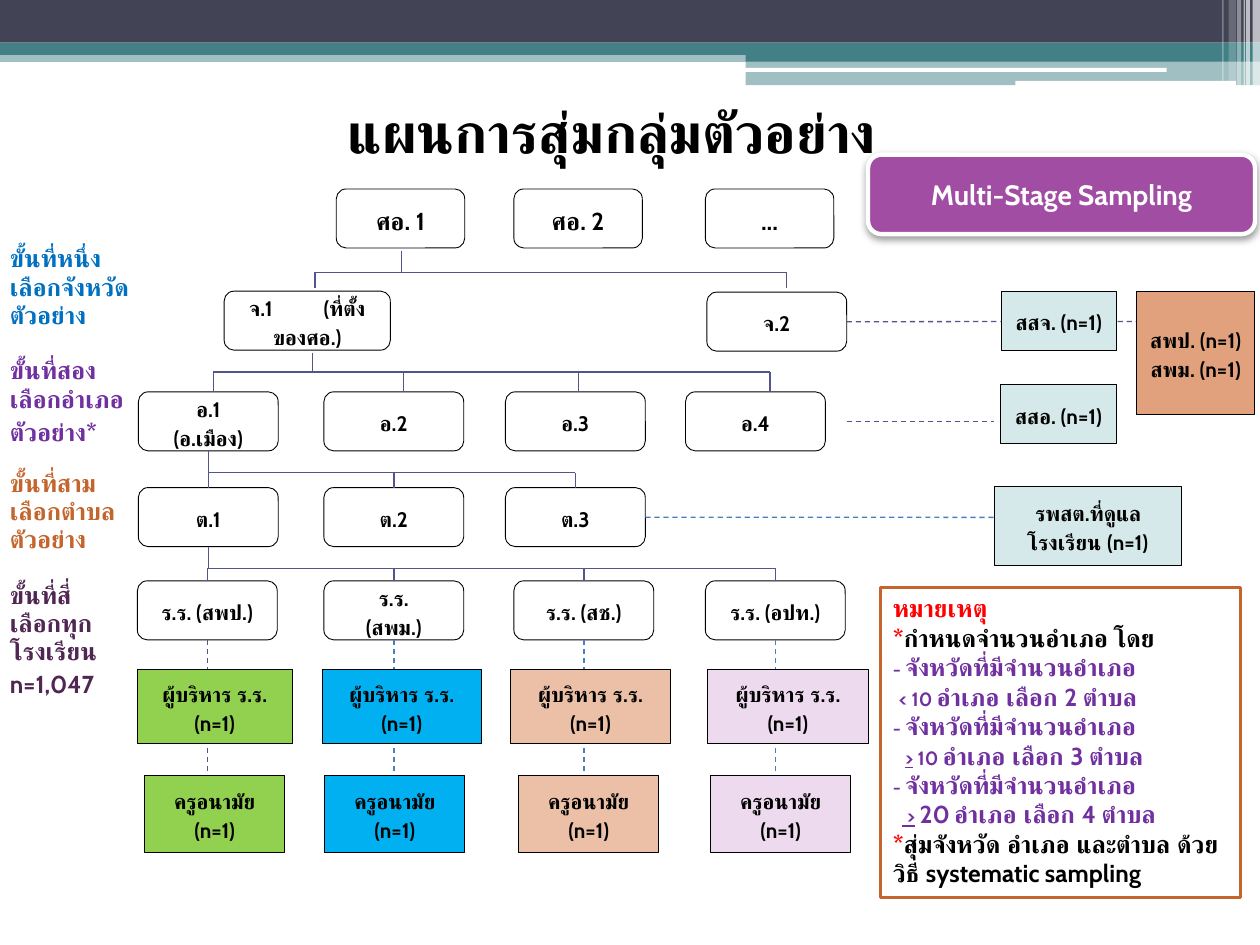
from lxml import etree
from pptx import Presentation
from pptx.dml.color import RGBColor
from pptx.enum.dml import MSO_LINE_DASH_STYLE as Dash
from pptx.enum.shapes import MSO_CONNECTOR, MSO_SHAPE
from pptx.enum.text import MSO_ANCHOR as Anchor, PP_ALIGN as Align
from pptx.oxml.ns import qn
from pptx.util import Cm, Pt

FONT = "Cabin"
INDIGO, BLUE, TEAL, PURPLE, RUST = "53548A", "4B7EBC", "438086", "7030A0", "C4652D"
BLACK, WHITE, RED, MINT = "000000", "FFFFFF", "FF0000", "D6E9EA"
BOTTOM, RIGHT, TOP = 2, 3, 0
BOX_W, BOX_H = 2.82, 1.19


def color(value):
    return RGBColor.from_string(value)


def child(parent, tag, **attributes):
    return etree.SubElement(parent, qn(tag), attributes)


def style_font(font, size, fill=BLACK):
    font.name, font.size, font.bold = FONT, Pt(size), True
    font.color.rgb = color(fill)


def add_box(page, left, top, width, height, fill=None, line=None, weight=0.5,
            rounded=False, alpha=None):
    kind = MSO_SHAPE.ROUNDED_RECTANGLE if rounded else MSO_SHAPE.RECTANGLE
    box = page.shapes.add_shape(kind, Cm(left), Cm(top), Cm(width), Cm(height))
    box.shadow.inherit = False
    if fill:
        box.fill.solid()
        box.fill.fore_color.rgb = color(fill)
        if alpha:
            solid = box.fill._xPr.find(qn("a:solidFill"))
            child(solid[0], "a:alpha", val=str(alpha * 1000))
    else:
        box.fill.background()
    if line:
        box.line.color.rgb = color(line)
        box.line.width = Pt(weight)
    else:
        box.line.fill.background()
    return box


def write(frame, lines, size, fill=BLACK, align=Align.CENTER, spacing=1.15, after=0):
    frame.word_wrap = True
    for index, line in enumerate(lines):
        para = frame.paragraphs[0] if index == 0 else frame.add_paragraph()
        para.text = line
        para.alignment, para.line_spacing, para.space_after = align, spacing, Pt(after)
        style_font(para.font, size, fill)


def add_label(page, lines, left, top, width=BOX_W, height=BOX_H, fill=None,
              size=12, rounded=False):
    box = add_box(page, left, top, width, height, fill, BLACK, rounded=rounded)
    box.text_frame.vertical_anchor = Anchor.MIDDLE
    write(box.text_frame, lines, size, after=10 if len(lines) == 1 else 0)
    return box


def add_row(page, labels, lefts, top, width=BOX_W, fill=None, size=12):
    return [add_label(page, [label], left, top, width, fill=fill, size=size, rounded=True)
            for label, left in zip(labels, lefts)]


def add_line(page, x1, y1, x2, y2, stroke=INDIGO, dashed=False):
    line = page.shapes.add_connector(MSO_CONNECTOR.STRAIGHT, Cm(x1), Cm(y1), Cm(x2), Cm(y2))
    line.line.color.rgb = color(stroke)
    line.line.width = Pt(0.75)
    if dashed:
        line.line.dash_style = Dash.DASH
    child(line._element.spPr, "a:effectLst")
    return line


def add_branch(page, trunk, top, bar, drops, bottom):
    """Trunk down to a bar, and one drop from the bar to each child."""
    stem = add_line(page, trunk, top, trunk, bar)
    add_line(page, drops[0], bar, drops[-1], bar)
    return stem, [add_line(page, x, bar, x, bottom) for x in drops]


def add_joined_branch(page, parent, children, bar):
    middles = [(box.left + box.width / 2) / Cm(1) for box in children]
    trunk = (parent.left + parent.width / 2) / Cm(1)
    stem, drops = add_branch(page, trunk, (parent.top + parent.height) / Cm(1), bar,
                             middles, children[0].top / Cm(1))
    stem.begin_connect(parent, BOTTOM)
    for drop, box in zip(drops, children):
        drop.end_connect(box, TOP)


def add_banner(page):
    for left, top, width, height, fill, alpha in [
            (0, 1.02, 25.4, 0.55 - 0.32, TEAL, 50), (0, 0, 25.4, 0.86, "424456", None),
            (0, 0.86, 25.4, 0.25, TEAL, None), (15.03, 0.99, 10.37, 0.25, TEAL, None),
            (15.03, 1.22, 10.37, 0.5, TEAL, 50)]:
        add_box(page, left, top, width, height, fill, alpha=alpha)
    for left, top, width, height in [(15.01, 1.37, 8.51, 0.08), (20.47, 1.63, 4.45, 0.1)]:
        add_box(page, left, top, width, height, WHITE, rounded=True)
    for left, width, height, alpha in [
            (25.25, 0.15, 1.73, 65), (25.12, 0.08, 1.73, 65), (25.07, 0.03, 1.73, 60),
            (24.94, 0.08, 1.73, 40), (24.77, 0.15, 1.63, 20), (24.64, 0.03, 1.63, 30)]:
        add_box(page, left, 0, width, height, WHITE, alpha=alpha)


def add_steps(page):
    steps = [
        (1.4, BLACK, []),
        (2.26, "0070C0", ["ขั้นที่หนึ่ง", "เลือกจังหวัดตัวอย่าง"]),
        (2.26, PURPLE, ["ขั้นที่สอง", "เลือกอำเภอตัวอย่าง*"]),
        (2.26, RUST, ["ขั้นที่สาม", "เลือกตำบลตัวอย่าง"]),
        (2.97, "502652", ["ขั้นที่สี่", "เลือกทุกโรงเรียน", "n=1,047"]),
    ]
    table = page.shapes.add_table(len(steps), 1, Cm(0.15), Cm(3.53), Cm(2.84), Cm(11.15)).table
    table.first_row = table.horz_banding = False
    for index, (height, fill, lines) in enumerate(steps):
        table.rows[index].height = Cm(height)
        cell = table.cell(index, 0)
        cell.fill.background()
        cell.margin_left = cell.margin_right = Cm(0.05)
        cell.margin_top = cell.margin_bottom = 0
        write(cell.text_frame, lines, 14, fill, Align.LEFT)
        borders = cell._tc.get_or_add_tcPr()
        for position, side in enumerate(("a:lnL", "a:lnR", "a:lnT", "a:lnB")):
            edge = etree.Element(qn(side), w="0")
            child(edge, "a:noFill")
            borders.insert(position, edge)


def add_heading(page):
    title = page.shapes.add_textbox(Cm(0.15), Cm(1.63), Cm(24.36), Cm(1.68))
    write(title.text_frame, ["แผนการสุ่มกลุ่มตัวอย่าง"], 32)
    badge = add_box(page, 17.5, 3.12, 7.8, 1.6, "A04DA3", WHITE, 2.5, rounded=True)
    badge.text_frame.vertical_anchor = Anchor.MIDDLE
    write(badge.text_frame, ["Multi-Stage Sampling"], 16, WHITE, spacing=1)
    shadow = child(badge._element.spPr.find(qn("a:effectLst")), "a:outerShdw",
                   blurRad=str(Pt(4.1)), dist=str(Pt(2)), dir="5400000", rotWithShape="0")
    child(child(shadow, "a:srgbClr", val=BLACK), "a:alpha", val="40000")


def add_notes(page):
    big, small = 14, 11
    district = [("- ", small, PURPLE, False), ("จังหวัดที่มีจำนวนอำเภอ", big, PURPLE, False)]
    notes = [
        (0, [("หมายเหตุ", big, RED, False)]),
        (0, [("*", big, RED, False), ("กำหนดจำนวนอำเภอ", big, BLACK, False),
             (" ", small, BLACK, False), ("โดย", big, BLACK, False)]),
        (0, district),
        (0.12, [("< 10 ", small, PURPLE, False), ("อำเภอ เลือก 2 ตำบล", big, PURPLE, False)]),
        (0, district),
        (0.24, [(">", small, PURPLE, True), (" 10 ", small, PURPLE, False),
                ("อำเภอ เลือก 3 ตำบล", big, PURPLE, False)]),
        (0, district),
        (0.19, [(" >", small, PURPLE, True), (" ", small, PURPLE, False),
                ("20", big, PURPLE, False), (" ", small, PURPLE, False),
                ("อำเภอ เลือก 4 ตำบล", big, PURPLE, False)]),
        (0, [("*", big, RED, False),
             ("สุ่มจังหวัด อำเภอ และตำบล ด้วยวิธี systematic sampling", big, BLACK, False)]),
    ]
    frame = add_box(page, 17.75, 11.84, 7.26, 6.25, WHITE, RUST, 1.5).text_frame
    frame.word_wrap, frame.vertical_anchor = True, Anchor.TOP
    for index, (indent, spans) in enumerate(notes):
        para = frame.paragraphs[0] if index == 0 else frame.add_paragraph()
        para.alignment = Align.LEFT
        para._p.get_or_add_pPr().set("marL", str(Cm(indent)))
        for text, size, fill, underlined in spans:
            span = para.add_run()
            span.text = text
            style_font(span.font, size, fill)
            span.font.underline = underlined


def main():
    deck = Presentation()
    deck.slide_width, deck.slide_height = Cm(25.4), Cm(19.05)
    page = deck.slides.add_slide(deck.slide_layouts[6])
    add_banner(page)
    add_steps(page)
    add_heading(page)

    # Sampling levels: centres, provinces, districts, subdistricts, schools
    add_row(page, ["ศอ. 1", "ศอ. 2", "..."], [6.78, 10.36, 14.22], 3.81, 2.59, size=14)
    home = add_label(page, ["จ.1\t(ที่ตั้ง\vของศอ.)"], 4.52, 5.87, 3.35, rounded=True)
    tabs = child(home.text_frame.paragraphs[0]._p.get_or_add_pPr(), "a:tabLst")
    child(tabs, "a:tab", pos=str(Cm(1.5)), algn="l")
    province = add_label(page, ["จ.2"], 14.25, 5.89, rounded=True)
    districts = add_row(page, ["อ.1\v(อ.เมือง)", "อ.2", "อ.3", "อ.4"],
                        [2.79, 6.53, 10.19, 13.82], 7.9)
    subdistricts = add_row(page, ["ต.1", "ต.2", "ต.3"], [2.79, 6.53, 10.19], 9.83)
    schools = add_row(page, ["ร.ร. (สพป.)", "ร.ร.\v(สพม.)", "ร.ร. (สช.)", "ร.ร. (อปท.)"],
                      [2.77, 6.53, 10.36, 14.22], 11.71, fill=WHITE)

    # Branches between levels
    add_branch(page, 8.1, 5.05, 5.49, [6.35, 15.85], 5.8)
    add_branch(page, 6.3, 7.11, 7.5, [4.3, 8.13, 11.66, 15.52], 7.9)
    add_joined_branch(page, districts[0], subdistricts, 9.53)
    add_joined_branch(page, subdistricts[0], schools, 11.46)

    # Dashed links to the offices
    add_line(page, 17.07, 6.48, 22.91, 6.48, dashed=True).begin_connect(province, RIGHT)
    add_line(page, 17.07, 8.5, 20.04, 8.5, dashed=True)
    add_line(page, 13.01, 10.43, 20.04, 10.43, BLUE, True).begin_connect(subdistricts[2], RIGHT)
    add_label(page, ["สสจ. (n=1)"], 20.19, 5.87, 2.31, fill=MINT)
    add_label(page, ["สสอ. (n=1)"], 20.17, 7.75, 2.34, fill=MINT)
    add_label(page, ["สพป. (n=1)", "สพม. (n=1)"], 22.91, 5.87, 2.39, 2.49, "E1A17C")
    add_label(page, ["รพสต.ที่ดูแลโรงเรียน (n=1)"], 20.04, 9.8, 3.78, 1.6, MINT)

    # Respondents under each school
    for school, fill, stroke, admin_left, admin_width, teacher_left in zip(
            schools, ["92D050", "00B0F0", "EBC0A7", "EDDAEE"], [INDIGO, BLUE, BLUE, BLUE],
            [2.77, 6.5, 10.29, 14.27], [3.12, 3.2, 3.23, 3.23], [2.92, 6.55, 10.46, 14.33]):
        middle = (school.left + school.width / 2) / Cm(1)
        add_line(page, middle, 12.9, middle, 15.77, stroke, True).begin_connect(school, BOTTOM)
        add_label(page, ["ผู้บริหาร ร.ร.", "(n=1)"], admin_left, 13.49, admin_width, 1.5, fill)
        add_label(page, ["ครูอนามัย", "(n=1)"], teacher_left, 15.63, BOX_W, 1.55, fill)

    add_notes(page)
    deck.save("out.pptx")


if __name__ == "__main__":
    main()
